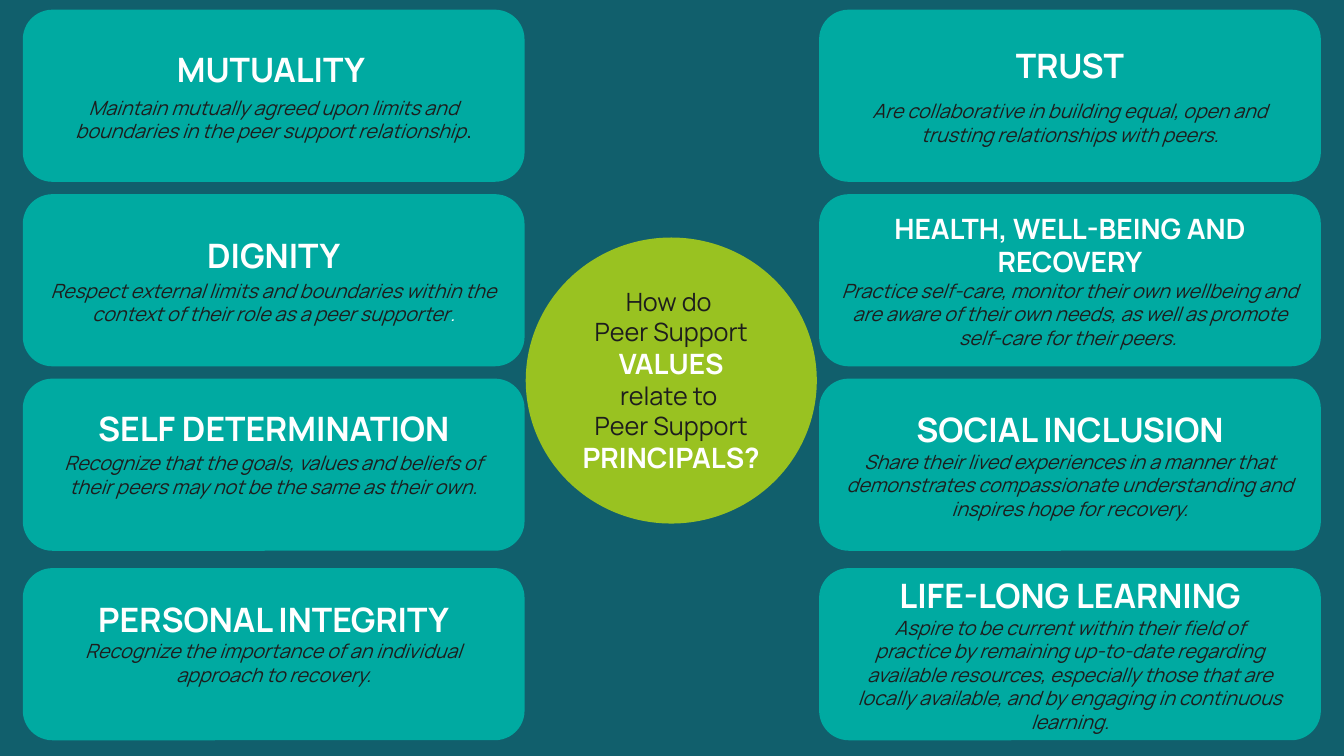
from pptx import Presentation
from pptx.dml.color import RGBColor
from pptx.enum.shapes import MSO_SHAPE
from pptx.enum.text import MSO_ANCHOR, PP_ALIGN
from pptx.util import Pt

DEEP_TEAL, TEAL, LIME, INK, WHITE = "115F6C", "00AAA1", "99C221", "1D1D1D", "FFFFFF"

# Text formats
BASE = {"name": "Manrope", "bold": False, "italic": False, "colour": INK}
HEADING = BASE | {"size": Pt(24), "bold": True, "colour": WHITE}
LONG_HEADING = HEADING | {"size": Pt(20)}
DESCRIPTION = BASE | {"size": Pt(14), "italic": True}
ARIAL_STOP = DESCRIPTION | {"name": "Arial", "italic": False}
WHITE_STOP = DESCRIPTION | {"colour": WHITE}
QUESTION = BASE | {"size": Pt(18)}
KEYWORD = LONG_HEADING

# Card grid, in points
CARD_LEFTS = (17.28, 586.08)
CARD_TOPS = (7.92, 139.68, 271.44, 406.8)
CARD_WIDTH, CARD_HEIGHT = 356.4, 120.96
BOTTOM_INSET = 3.6
LIFT = 16.8  # one description line, raises the text of a card

# One column per list: heading, heading format, gap below it, lift, description paragraphs
VALUES = (
    [
        ("MUTUALITY ", HEADING, 4.8, 0, [
            [("Maintain mutually agreed upon limits and", DESCRIPTION)],
            [("boundaries in the peer support relationship", DESCRIPTION), (".", ARIAL_STOP)]]),
        ("DIGNITY", HEADING, 2.4, 0, [
            [("Respect external limits and boundaries within the context of their "
              "role as a peer supporter", DESCRIPTION), (".", WHITE_STOP)]]),
        ("SELF DETERMINATION", HEADING, 2.4, LIFT, [
            [("Recognize that the goals, values and beliefs of their peers may not "
              "be the same as their own.", DESCRIPTION)]]),
        ("PERSONAL INTEGRITY", HEADING, 0, LIFT, [
            [("Recognize the importance of an individual approach to recovery.", DESCRIPTION)]]),
    ],
    [
        ("TRUST", HEADING, 9.6, 0, [
            [("Are collaborative in building equal, open and trusting relationships "
              "with peers.", DESCRIPTION)]]),
        ("HEALTH, WELL-BEING AND RECOVERY", LONG_HEADING, 0, 0, [
            [("Practice self-care, monitor their own wellbeing and are aware of their own "
              "needs, as well as promote self-care for their peers. ", DESCRIPTION)]]),
        ("SOCIAL INCLUSION", HEADING, 0, 0, [
            [("Share their lived experiences in a manner that demonstrates compassionate "
              "understanding and inspires hope for recovery.", DESCRIPTION)]]),
        ("LIFE-LONG LEARNING", HEADING, 0, 0, [
            [("Aspire to be current within their field of", DESCRIPTION)],
            [("practice by remaining up-to-date regarding", DESCRIPTION)],
            [("available resources, especially those that are locally available, and by "
              "engaging in continuous learning.", DESCRIPTION)]]),
    ],
)

CENTRAL_QUESTION = [
    [("How do ", QUESTION)],
    [("Peer Support ", QUESTION), ("VALUES", KEYWORD)],
    [("relate to ", QUESTION)],
    [("Peer Support ", QUESTION), ("PRINCIPALS?", KEYWORD)],
]


def paint(color_format, colour):
    color_format.rgb = RGBColor.from_string(colour)


def add_panel(slide, outline, box, colour):
    """Add a filled shape and return its empty text frame."""
    panel = slide.shapes.add_shape(outline, *map(Pt, box))
    panel.shadow.inherit = False
    panel.fill.solid()
    paint(panel.fill.fore_color, colour)
    paint(panel.line.color, colour)
    panel.line.width = Pt(2)
    frame = panel.text_frame
    frame.word_wrap = True
    frame.vertical_anchor = MSO_ANCHOR.MIDDLE
    return frame


def write(frame, paragraphs):
    """Fill the frame with centred paragraphs of (wording, format) runs."""
    for index, pieces in enumerate(paragraphs):
        paragraph = frame.add_paragraph() if index else frame.paragraphs[0]
        paragraph.alignment = PP_ALIGN.CENTER
        for wording, text_format in pieces:
            run = paragraph.add_run()
            run.text = wording
            for attribute, value in text_format.items():
                if attribute == "colour":
                    paint(run.font.color, value)
                else:
                    setattr(run.font, attribute, value)


def add_value_card(slide, box, value):
    heading, heading_format, gap, lift, description = value
    frame = add_panel(slide, MSO_SHAPE.ROUNDED_RECTANGLE, box, TEAL)
    frame.margin_bottom = Pt(BOTTOM_INSET + lift)
    write(frame, [[(heading, heading_format)], *description])
    frame.paragraphs[1].space_before = Pt(gap)


def add_question_circle(slide, box):
    write(add_panel(slide, MSO_SHAPE.OVAL, box, LIME), CENTRAL_QUESTION)


def main():
    deck = Presentation()
    deck.slide_width, deck.slide_height = Pt(960), Pt(540)
    slide = deck.slides.add_slide(deck.slide_layouts[6])
    slide.background.fill.solid()
    paint(slide.background.fill.fore_color, DEEP_TEAL)

    # Question in the middle, values on both sides
    add_question_circle(slide, (376.56, 170.64, 205.92, 202.32))
    for left, column in zip(CARD_LEFTS, VALUES):
        for top, value in zip(CARD_TOPS, column):
            add_value_card(slide, (left, top, CARD_WIDTH, CARD_HEIGHT), value)

    deck.save("out.pptx")


if __name__ == "__main__":
    main()
